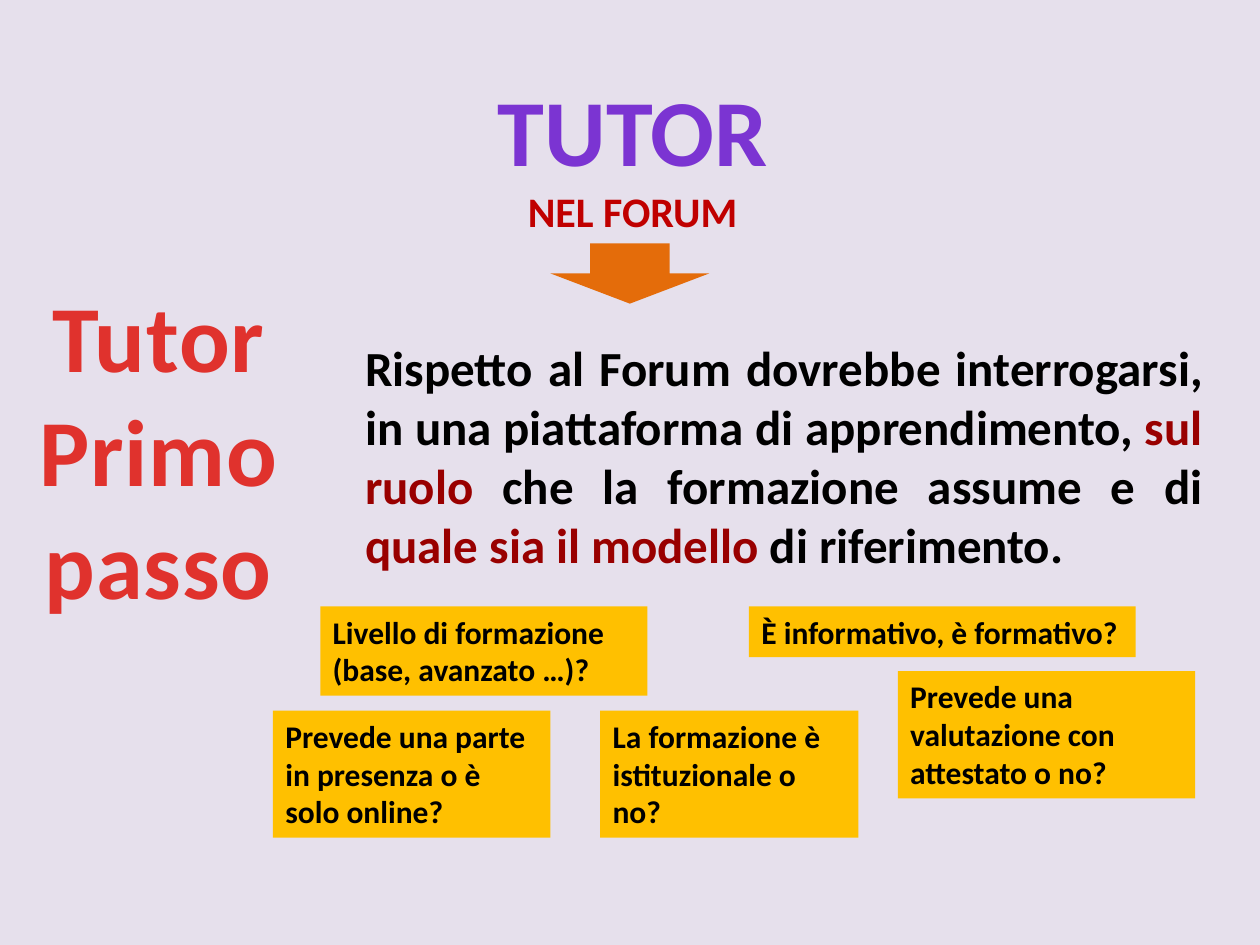
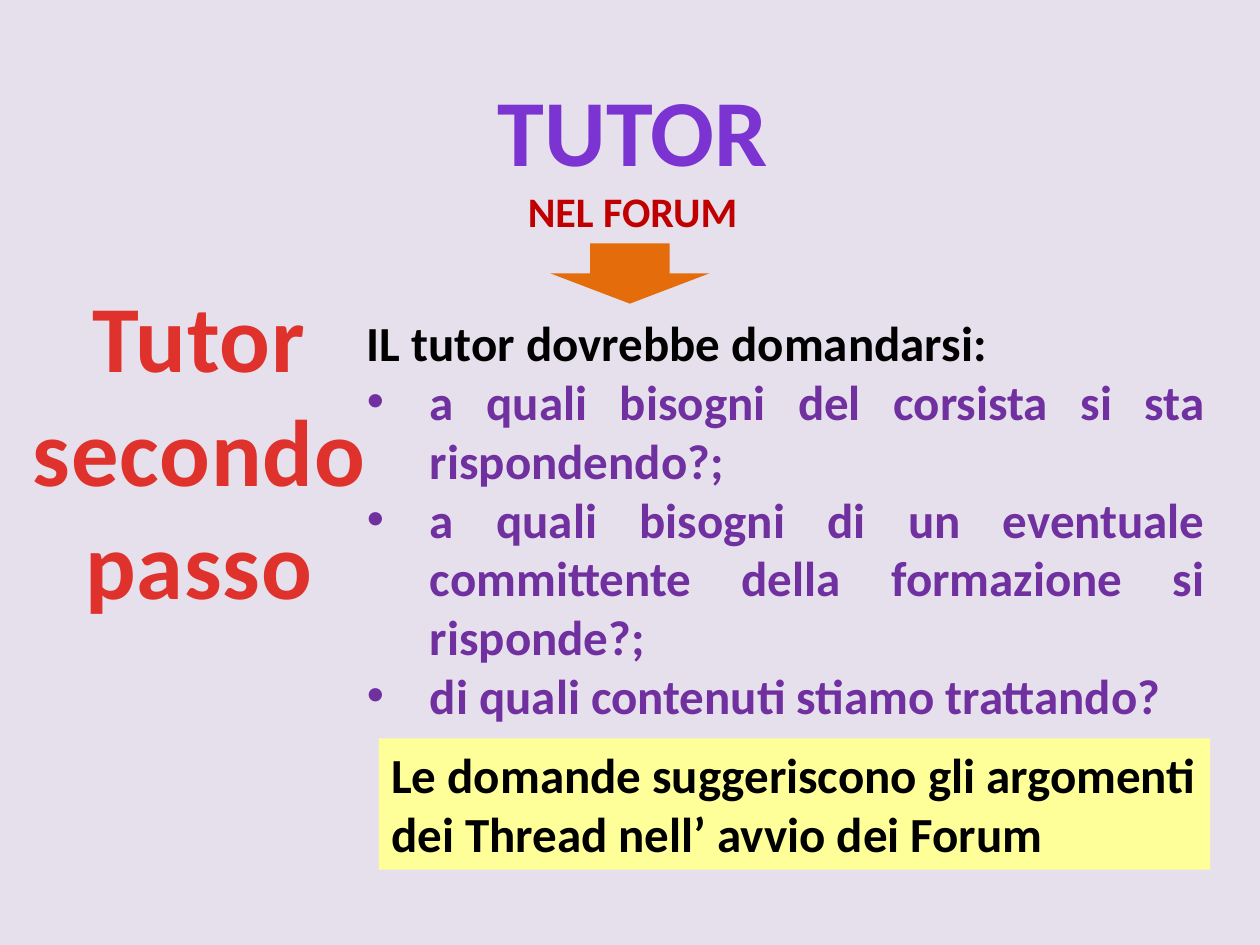
from lxml.etree import SubElement
from pptx import Presentation
from pptx.dml.color import RGBColor
from pptx.enum.shapes import MSO_SHAPE
from pptx.enum.text import MSO_ANCHOR, MSO_AUTO_SIZE, PP_ALIGN
from pptx.oxml.ns import qn
from pptx.util import Pt

LAVENDER = "E6E0EC"
VIOLET = "7B34D2"
PURPLE = "7030A0"
RED = "C00000"
STEP_RED = "E0322D"
DARK_RED = "990000"
ORANGE = "E46C0A"
AMBER = "FFC000"
YELLOW = "FFFF99"
BLACK = "000000"


def color(code):
    return RGBColor.from_string(code)


class ForumDeck:
    font_name = "Calibri"

    def __init__(self):
        self.deck = Presentation()
        self.deck.slide_width, self.deck.slide_height = Pt(720), Pt(540)
        fill = self.deck.slide_master.background.fill
        fill.solid()
        fill.fore_color.rgb = color(LAVENDER)
        self.page = None

    def place(self, box, area, wrap=True):
        box.left, box.top, box.width, box.height = map(Pt, area)
        frame = box.text_frame
        frame.word_wrap = wrap
        frame.auto_size = MSO_AUTO_SIZE.NONE
        frame.vertical_anchor = MSO_ANCHOR.TOP
        return frame

    def add_line(self, frame, index, spans, size, align, code=None, bullet=False):
        paragraph = frame.add_paragraph() if index else frame.paragraphs[0]
        properties = paragraph._p.get_or_add_pPr()
        indent = Pt(36) if bullet else 0
        properties.set("marL", str(indent))
        properties.set("indent", str(-indent))
        if bullet:
            SubElement(properties, qn("a:buFont")).set("typeface", "Arial")
            SubElement(properties, qn("a:buChar")).set("char", "•")
        else:
            SubElement(properties, qn("a:buNone"))
        paragraph.alignment = align
        paragraph.space_before = Pt(0)
        font = paragraph.font
        font.name, font.size, font.bold = self.font_name, Pt(size), True
        if code:
            font.color.rgb = color(code)
        for text, span_code in spans:
            span = paragraph.add_run()
            span.text = text
            if span_code:
                span.font.color.rgb = color(span_code)
        return paragraph

    def start_page(self, step_lines, step_left, step_width):
        self.page = self.deck.slides.add_slide(self.deck.slide_layouts[1])
        self.heading()
        self.arrow()
        self.step(step_lines, step_left, step_width)

    def heading(self):
        frame = self.place(self.page.shapes.title, (276.5, 37.5, 170, 101.5), wrap=False)
        lines = [("TUTOR", 54, VIOLET), ("NEL FORUM", 24, RED)]
        for index, (text, size, code) in enumerate(lines):
            self.add_line(frame, index, [(text, None)], size, PP_ALIGN.CENTER, code)

    def shape(self, kind, area, code):
        box = self.page.shapes.add_shape(kind, *map(Pt, area))
        box.shadow.inherit = False
        box.fill.solid()
        box.fill.fore_color.rgb = color(code)
        box.line.fill.background()
        return box

    def arrow(self):
        self.shape(MSO_SHAPE.DOWN_ARROW, (314.6, 139, 90.7, 34.5), ORANGE)

    def step(self, lines, left, width):
        area = (left, 155.5, width, 204)
        box = self.page.shapes.add_textbox(*map(Pt, area))
        frame = self.place(box, area, wrap=False)
        for index, line in enumerate(lines):
            paragraph = self.add_line(frame, index, [(line, None)], 54, PP_ALIGN.CENTER, STEP_RED)
            for span in paragraph.runs:
                span._r.get_or_add_rPr().set("spc", "50")

    def body(self, area):
        return self.place(self.page.placeholders[1], area)

    def statement(self, area, spans):
        self.add_line(self.body(area), 0, spans, 28, PP_ALIGN.JUSTIFY)

    def questions(self, area, intro, items):
        frame = self.body(area)
        self.add_line(frame, 0, [(intro, None)], 28, PP_ALIGN.JUSTIFY, BLACK)
        for index, item in enumerate(items, 1):
            self.add_line(frame, index, [(item, None)], 28, PP_ALIGN.JUSTIFY, PURPLE, bullet=True)

    def note(self, area, text, code=AMBER, size=18):
        frame = self.place(self.shape(MSO_SHAPE.RECTANGLE, area, code), area)
        self.add_line(frame, 0, [(text, None)], size, PP_ALIGN.LEFT, BLACK)


def first_step(forum):
    forum.start_page(["Tutor", "Primo", "passo"], 14, 153)
    forum.statement((201.5, 189.5, 493, 143.5), [
        ("Rispetto al Forum dovrebbe interrogarsi, in una piattaforma di apprendimento, ", BLACK),
        ("sul ruolo ", DARK_RED),
        ("che la formazione assume e di ", BLACK),
        ("quale sia il modello", DARK_RED),
        (" di riferimento.", BLACK),
    ])
    upper, lower, tall = 346.5, 406, 72.7
    notes = [
        ((183, upper, 187, 51), "Livello di formazione (base, avanzato …)?"),
        ((156, lower, 158.5, tall), "Prevede una parte in presenza o è solo online?"),
        ((428, upper, 221, 29), "È informativo, è formativo?"),
        ((513, 383.5, 170, tall), "Prevede una valutazione con attestato o no?"),
        ((343, lower, 147.5, tall), "La formazione è istituzionale o no?"),
    ]
    for area, text in notes:
        forum.note(area, text)


def second_step(forum):
    forum.start_page(["Tutor", "secondo", "passo"], 10.5, 206.5)
    forum.questions((202.5, 175, 493, 245), "IL tutor dovrebbe domandarsi:", [
        "a quali bisogni del corsista si sta rispondendo?;",
        "a quali bisogni di un eventuale committente della formazione si risponde?;",
        "di quali contenuti stiamo trattando?",
    ])
    forum.note((216.5, 422, 475, 75),
               "Le domande suggeriscono gli argomenti dei Thread nell’ avvio dei Forum",
               YELLOW, 28)


def main():
    forum = ForumDeck()
    first_step(forum)
    second_step(forum)
    forum.deck.save("out.pptx")


if __name__ == "__main__":
    main()
